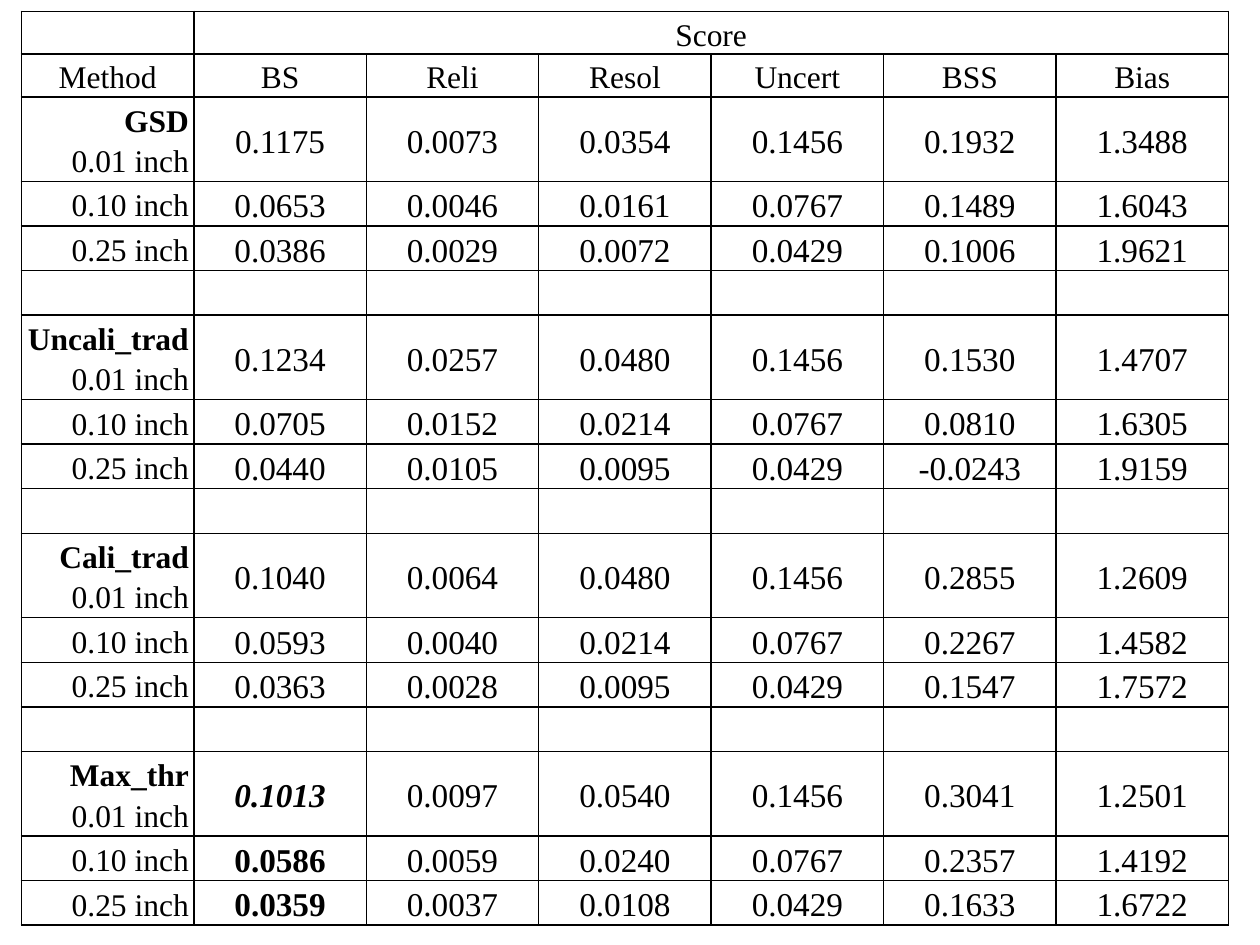
from lxml import etree
from pptx import Presentation
from pptx.dml.color import RGBColor
from pptx.enum.text import MSO_ANCHOR, PP_ALIGN
from pptx.oxml.ns import qn
from pptx.util import Inches, Pt

CENTER, RIGHT = PP_ALIGN.CENTER, PP_ALIGN.RIGHT
MIDDLE = MSO_ANCHOR.MIDDLE
BLANK_LAYOUT = 6
FONT = "Times New Roman"
COLORS = {"ink": "000000", "paper": "FFFFFF"}
LABEL_SIZE, VALUE_SIZE = 18, 19
HEAD_H, ROW_H, FIRST_H = 0.34, 0.354, 0.67
LEFT, TOP, WIDTH = 0.17, 0.09, 9.58

SCORES = ["BS", "Reli", "Resol", "Uncert", "BSS", "Bias"]
THRESHOLDS = ["0.01 inch", "0.10 inch", "0.25 inch"]
METHODS = {
    "GSD": [
        ["0.1175", "0.0073", "0.0354", "0.1456", "0.1932", "1.3488"],
        ["0.0653", "0.0046", "0.0161", "0.0767", "0.1489", "1.6043"],
        ["0.0386", "0.0029", "0.0072", "0.0429", "0.1006", "1.9621"],
    ],
    "Uncali_trad": [
        ["0.1234", "0.0257", "0.0480", "0.1456", "0.1530", "1.4707"],
        ["0.0705", "0.0152", "0.0214", "0.0767", "0.0810", "1.6305"],
        ["0.0440", "0.0105", "0.0095", "0.0429", "-0.0243", "1.9159"],
    ],
    "Cali_trad": [
        ["0.1040", "0.0064", "0.0480", "0.1456", "0.2855", "1.2609"],
        ["0.0593", "0.0040", "0.0214", "0.0767", "0.2267", "1.4582"],
        ["0.0363", "0.0028", "0.0095", "0.0429", "0.1547", "1.7572"],
    ],
    "Max_thr": [
        ["0.1013", "0.0097", "0.0540", "0.1456", "0.3041", "1.2501"],
        ["0.0586", "0.0059", "0.0240", "0.0767", "0.2357", "1.4192"],
        ["0.0359", "0.0037", "0.0108", "0.0429", "0.1633", "1.6722"],
    ],
}
BEST_METHOD = "Max_thr"


def row_heights():
    """Return the height of every table row in inches."""
    group = [FIRST_H, ROW_H, ROW_H]
    heights = [HEAD_H, HEAD_H]
    for i in range(len(METHODS)):
        heights += ([ROW_H] if i else []) + group
    return heights


def style_cell(cell):
    """Give a cell its margins, thin black borders and white fill."""
    cell.margin_left = cell.margin_right = Inches(0.04)
    cell.margin_top = cell.margin_bottom = 0
    cell.vertical_anchor = MIDDLE
    tcPr = cell._tc.get_or_add_tcPr()
    for side in ("a:lnL", "a:lnR", "a:lnT", "a:lnB"):
        ln = etree.SubElement(tcPr, qn(side), w=str(Pt(1)))
        fill = etree.SubElement(ln, qn("a:solidFill"))
        etree.SubElement(fill, qn("a:srgbClr"), val=COLORS["ink"])
    cell.fill.solid()
    cell.fill.fore_color.rgb = RGBColor.from_string(COLORS["paper"])


def write(p, text, align=CENTER, size=LABEL_SIZE, bold=False, italic=False):
    """Write one run into a paragraph."""
    p.alignment = align
    p.line_spacing = 1.15
    r = p.add_run()
    r.text = text
    r.font.name = FONT
    r.font.size = Pt(size)
    r.font.bold = bold
    r.font.italic = italic
    r.font.color.rgb = RGBColor.from_string(COLORS["ink"])


def add_grid(s):
    """Add the empty bordered table."""
    heights = row_heights()
    n_cols = 1 + len(SCORES)
    table = s.shapes.add_table(len(heights), n_cols, Inches(LEFT), Inches(TOP),
                               Inches(WIDTH), Inches(sum(heights))).table
    table.first_row = table.horz_banding = False
    for row, height in zip(table.rows, heights):
        row.height = Inches(height)
    for cell in table.iter_cells():
        style_cell(cell)
    return table


def fill_header(table):
    """Write the two heading rows."""
    table.cell(0, 1).merge(table.cell(0, len(SCORES)))
    write(table.cell(0, 1).text_frame.paragraphs[0], "Score")
    for col, text in enumerate(["Method"] + SCORES):
        write(table.cell(1, col).text_frame.paragraphs[0], text)


def fill_method(table, top, name, rows):
    """Write one method's rows, with its name above the first threshold."""
    for i, (threshold, values) in enumerate(zip(THRESHOLDS, rows)):
        tf = table.cell(top + i, 0).text_frame
        p = tf.paragraphs[0]
        if i == 0:
            write(p, name, RIGHT, bold=True)
            p = tf.add_paragraph()
        write(p, threshold, RIGHT)
        for col, value in enumerate(values, 1):
            best = name == BEST_METHOD and col == 1
            write(table.cell(top + i, col).text_frame.paragraphs[0], value,
                  size=VALUE_SIZE, bold=best, italic=best and i == 0)


def main():
    """Build the slide with the score table."""
    prs = Presentation()
    prs.slide_width, prs.slide_height = Inches(10), Inches(7.5)
    s = prs.slides.add_slide(prs.slide_layouts[BLANK_LAYOUT])
    table = add_grid(s)
    fill_header(table)
    for i, (name, rows) in enumerate(METHODS.items()):
        fill_method(table, 2 + i * (len(THRESHOLDS) + 1), name, rows)
    prs.save("out.pptx")


if __name__ == "__main__":
    main()
